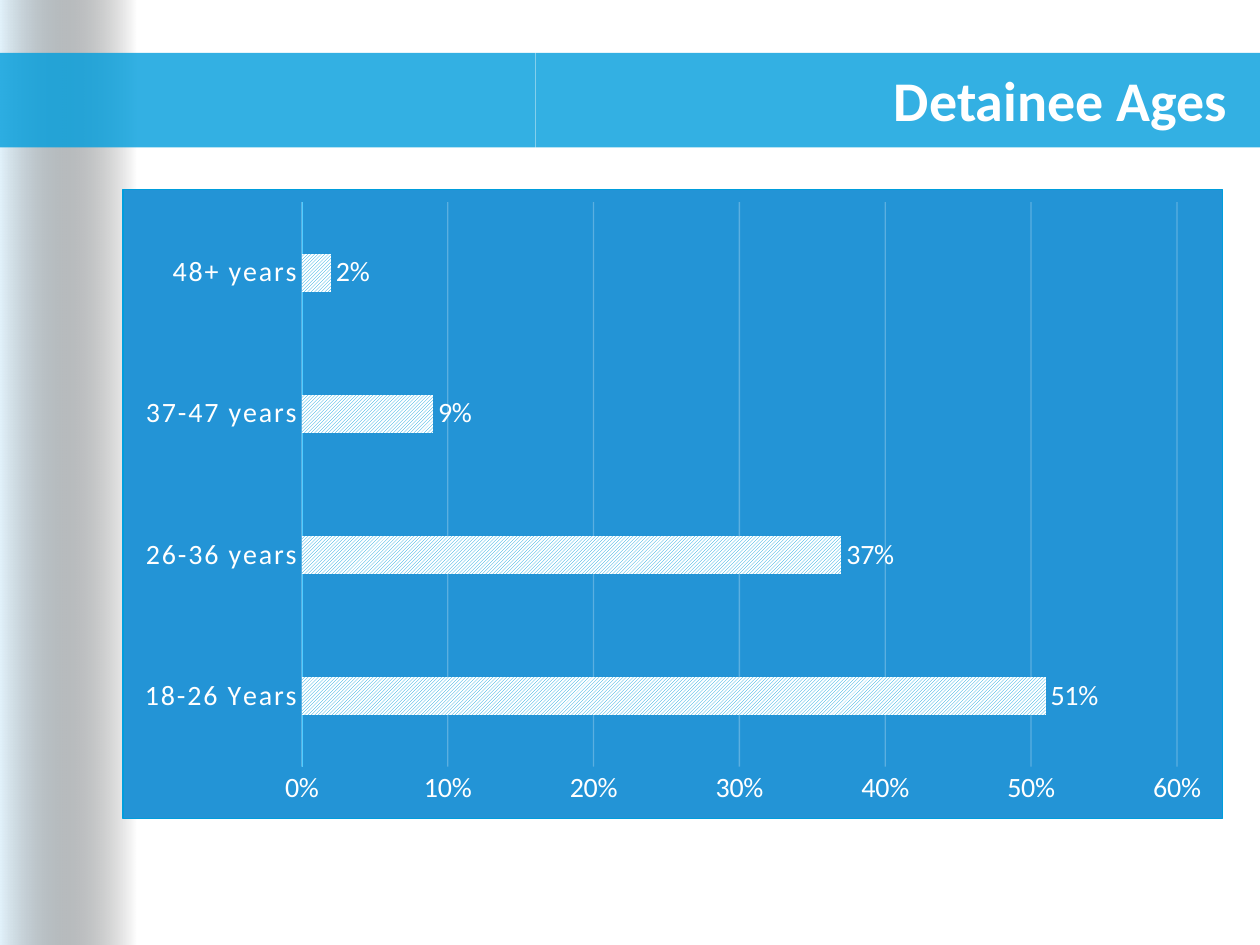
"""Build the Detainee Ages slide."""
from dataclasses import dataclass
from typing import Optional

from lxml.etree import SubElement
from pptx import Presentation
from pptx.chart.data import CategoryChartData
from pptx.dml.color import RGBColor
from pptx.enum.chart import XL_CHART_TYPE, XL_LABEL_POSITION, XL_TICK_MARK
from pptx.enum.dml import MSO_PATTERN
from pptx.enum.shapes import MSO_SHAPE
from pptx.enum.text import MSO_ANCHOR, PP_ALIGN
from pptx.oxml import parse_xml
from pptx.oxml.ns import nsdecls, qn
from pptx.util import Emu, Pt

EMU_PER_PX = 9144


@dataclass(frozen=True)
class Theme:
    """Colours, font and type sizes of the slide."""
    font: str = "Calibri"
    accent: str = "009DDC"
    panel: str = "2394D6"
    axis: str = "51CDFF"
    pale: str = "E1F1FA"
    white: str = "FFFFFF"
    black: str = "000000"
    title_size: int = 32
    chart_size: int = 16


@dataclass(frozen=True)
class Area:
    """A rectangle in px."""
    left: int
    top: int
    width: int
    height: int

    def emu(self) -> list[Emu]:
        """Return left, top, width and height in EMU."""
        return [px(n) for n in (self.left, self.top, self.width, self.height)]


THEME = Theme()
EDGE = Area(0, 0, 108, 750)
BANDS = [Area(425, 42, 575, 75), Area(0, 42, 425, 75)]
TITLE = Area(253, 46, 731, 65)
CHART = Area(97, 150, 874, 500)
AGES = {"18-26 Years": 0.51, "26-36 years": 0.37, "37-47 years": 0.09, "48+ years": 0.02}


def px(length: int) -> Emu:
    """Turn px into EMU."""
    return Emu(length * EMU_PER_PX)


def rgb(code: str) -> RGBColor:
    """Turn a hex code into a colour."""
    return RGBColor.from_string(code)


def set_alpha(element, percent: int) -> None:
    """Set the opacity of the last colour in an element."""
    colour = list(element.iter(qn("a:srgbClr")))[-1]
    SubElement(colour, qn("a:alpha")).set("val", str(percent * 1000))


def add_panel(page, area: Area, colour: str, alpha: int, start: Optional[str] = None) -> None:
    """Draw a plain rectangle, or one that fades from a start colour."""
    panel = page.shapes.add_shape(MSO_SHAPE.RECTANGLE, *area.emu())
    panel.shadow.inherit = False
    panel.line.fill.background()
    if start:
        panel.fill.gradient()
        panel.fill.gradient_angle = 0
        for stop, code, position in zip(panel.fill.gradient_stops, (start, colour), (0, 1)):
            stop.color.rgb = rgb(code)
            stop.position = position
    else:
        panel.fill.solid()
        panel.fill.fore_color.rgb = rgb(colour)
    set_alpha(panel.element.spPr, alpha)


def style_font(font, size: int, colour: str) -> None:
    """Apply the theme font."""
    font.name = THEME.font
    font.size = Pt(size)
    font.color.rgb = rgb(colour)


def add_title(page, text: str) -> None:
    """Place the title in front of the bands."""
    title = page.shapes.title
    title.left, title.top, title.width, title.height = TITLE.emu()
    title.element.getparent().append(title.element)
    title.text_frame.vertical_anchor = MSO_ANCHOR.MIDDLE
    para = title.text_frame.paragraphs[0]
    para.alignment = PP_ALIGN.RIGHT
    span = para.add_run()
    span.text = text
    span.font.bold = True
    style_font(span.font, THEME.title_size, THEME.white)


def style_axes(chart) -> None:
    """Format both axes and the gridlines."""
    category, value = chart.category_axis, chart.value_axis
    for axis in (category, value):
        axis.major_tick_mark = axis.minor_tick_mark = XL_TICK_MARK.NONE
        style_font(axis.tick_labels.font, THEME.chart_size, THEME.white)
    category.format.line.color.rgb = rgb(THEME.axis)
    category.format.line.width = Pt(0.25)
    for properties in category.tick_labels._element.iter(qn("a:defRPr")):
        properties.set("spc", "120")
    value.format.line.fill.background()
    value.tick_labels.number_format = "0%"
    value.tick_labels.number_format_is_linked = False
    value.has_major_gridlines = True
    grid = value.major_gridlines
    grid.format.line.color.rgb = rgb(THEME.white)
    grid.format.line.width = Pt(0.75)
    set_alpha(value._element.find(qn("c:majorGridlines")), 25)


def style_bars(plot) -> None:
    """Format the hatched bars and their labels."""
    plot.gap_width = 269
    plot.overlap = -20
    plot.vary_by_categories = False
    series = plot.series[0]
    fill = series.format.fill
    fill.patterned()
    fill.pattern = MSO_PATTERN.LIGHT_UPWARD_DIAGONAL
    fill.fore_color.rgb = rgb(THEME.accent)
    fill.back_color.rgb = rgb(THEME.white)
    labels = series.data_labels
    labels.show_value = True
    labels.position = XL_LABEL_POSITION.OUTSIDE_END
    labels.number_format = "0%"
    labels.number_format_is_linked = False
    style_font(labels.font, THEME.chart_size, THEME.white)


def add_age_chart(page) -> None:
    """Add the bar chart of age groups."""
    data = CategoryChartData(number_format="0%")
    data.categories = list(AGES)
    data.add_series("Series 1", list(AGES.values()))
    chart = page.shapes.add_chart(XL_CHART_TYPE.BAR_CLUSTERED, *CHART.emu(), data).chart
    chart.has_title = chart.has_legend = False
    style_font(chart.font, THEME.chart_size, THEME.accent)
    style_axes(chart)
    style_bars(chart.plots[0])
    chart.element.find(qn("c:chart")).addnext(parse_xml(
        f'<c:spPr {nsdecls("c", "a")}>'
        f'<a:solidFill><a:srgbClr val="{THEME.panel}"/></a:solidFill>'
        f'<a:ln w="{Pt(0.75)}"><a:solidFill><a:srgbClr val="{THEME.accent}"/></a:solidFill></a:ln>'
        '</c:spPr>'))


def main() -> None:
    """Build and save the deck."""
    deck = Presentation()
    deck.slide_width, deck.slide_height = px(1000), px(750)
    page = deck.slides.add_slide(deck.slide_layouts[5])
    page.background.fill.solid()
    page.background.fill.fore_color.rgb = rgb(THEME.white)
    add_panel(page, EDGE, THEME.black, 0, start=THEME.pale)
    for band in BANDS:
        add_panel(page, band, THEME.accent, 80)
    add_title(page, "Detainee Ages")
    add_age_chart(page)
    deck.save("out.pptx")


if __name__ == "__main__":
    main()
